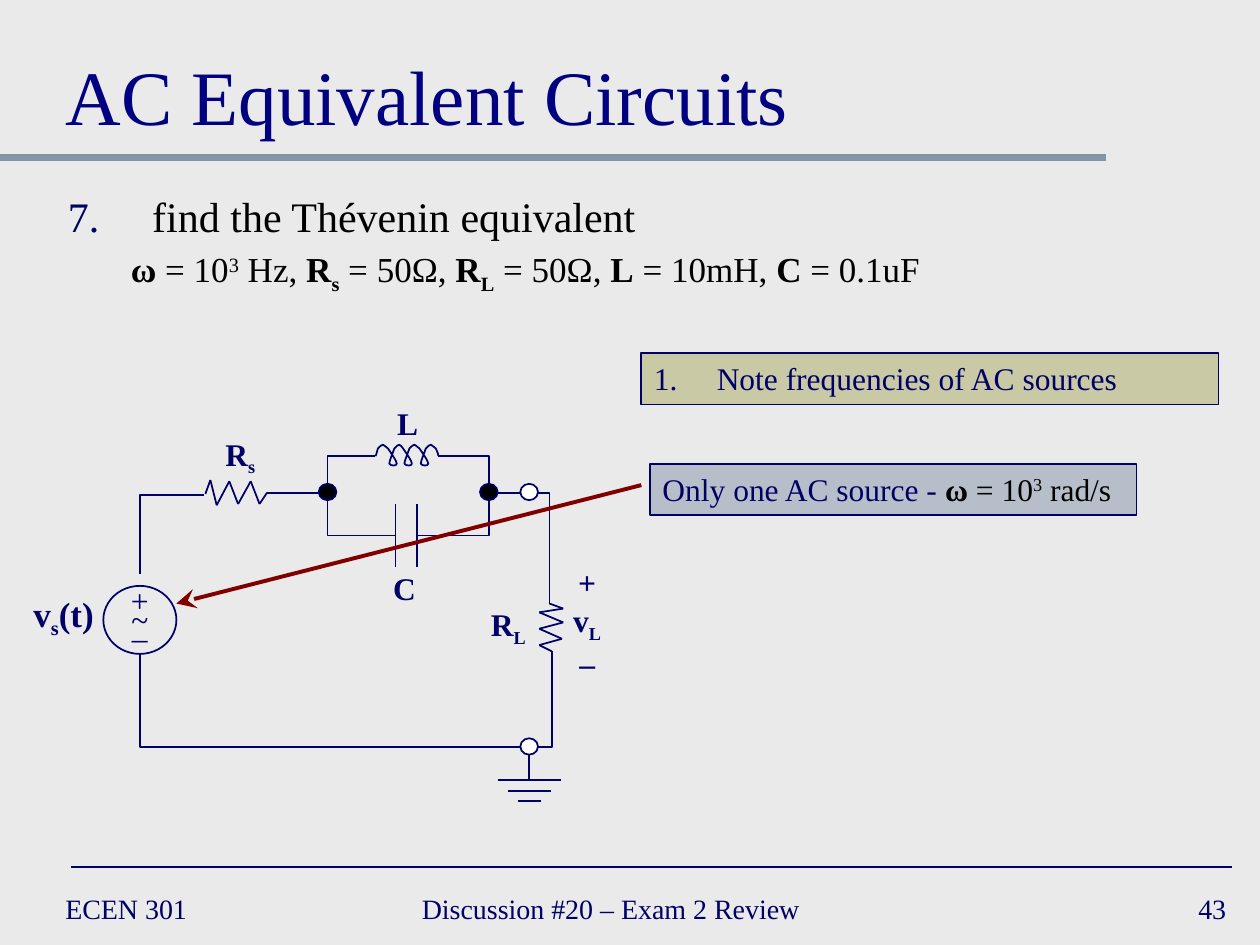
"""Build the slide on the Thévenin equivalent of an AC circuit."""
import itertools

import pptx
import pptx.dml.color
import pptx.enum.shapes
import pptx.enum.text
import pptx.oxml.ns
import pptx.util
from lxml import etree

FONT, NAVY, BLACK, WHITE = "Times New Roman", "000066", "000000", "FFFFFF"
STEEL, MAROON, KHAKI = "8495A9", "800000", "ACA964"
SHAPES = pptx.enum.shapes.MSO_SHAPE
ANCHORS = pptx.enum.text.MSO_ANCHOR
ALIGN = {name[0].lower(): getattr(pptx.enum.text.PP_ALIGN, name)
         for name in ("LEFT", "CENTER", "RIGHT")}

TITLE = "AC Equivalent Circuits"
TASK = [("find the Thévenin equivalent", "k")]
GIVENS = [("ω", "bk"), (" = 10", "k"), ("3", "k^"), (" Hz, ", "k"), ("R", "bk"), ("s", "bk_"),
          (" = 50Ω, ", "k"), ("R", "bk"), ("L", "bk_"), (" = 50Ω, ", "k"), ("L", "bk"),
          (" = 10mH, ", "k"), ("C ", "bk"), ("= 0.1uF", "k")]
STEP = [("Note frequencies of AC sources", "")]
ANSWER = [("Only one AC source - ", ""), ("ω", "bk"), (" = 10", "k"), ("3", "k^"),
          (" rad/s", "k")]
FOOTERS = [("ECEN 301", 0.42, 2.17, "l"),
           ("Discussion #20 – Exam 2 Review", 3.25, 3.83, "l"),
           ("43", 7.75, 2.08, "r")]
LABELS = [
    ((1.62, 3.4, 0.51, 0.4), 18, [[(" R", "b"), ("s", "b_")]]),
    ((0.16, 4.65, 0.69, 0.43), 20, [[("v", "b"), ("s", "b_"), ("(t)", "b")]]),
    ((0.94, 4.56, 0.34, 0.7), 18, [[("+", "")], [("–", "")]]),
    ((0.94, 4.71, 0.34, 0.4), 18, [[("~", "")]]),
    ((3.79, 4.75, 0.49, 0.4), 18, [[("R", "b"), ("L", "b_")]]),
    ((3.05, 3.16, 0.37, 0.4), 18, [[("L", "b")]]),
    ((3.02, 4.47, 0.38, 0.4), 18, [[("C", "b")]]),
    ((4.44, 4.42, 0.44, 1), 18, [[("+", "b")], [("v", "b"), ("L", "b_")], [("–", "b")]]),
]
SOURCE_RESISTOR = [(1.63, 3.92), (1.67, 3.81), (1.72, 4.01), (1.82, 3.82), (1.89, 4),
                   (1.99, 3.82), (2.06, 4), (2.12, 3.91), (2.53, 3.91)]
LOAD_RESISTOR = [(4.36, 4.79), (4.47, 4.83), (4.28, 4.86), (4.47, 4.94), (4.28, 4.99),
                 (4.46, 5.07), (4.28, 5.12), (4.38, 5.17)]
GROUND_BARS = [(6.19, 0.5), (6.28, 0.34), (6.36, 0.18)]
GROUND_X = 4.2
PLATES = [3.14, 3.31]
STRAIGHT_WIRES = [((GROUND_X, 6.18), (GROUND_X, 5.93)), ((3.95, 3.91), (4.13, 3.91))]
CORNER_WIRES = [((4.13, 5.93), (1.11, 5.19)), ((1.62, 3.93), (1.11, 4.56)),
                ((4.27, 3.91), (4.36, 4.79)), ((4.27, 5.93), (4.38, 5.17)),
                ((2.98, 3.62), (2.6, 3.84)), ((3.48, 3.62), (3.88, 3.84)),
                ((3.14, 4.25), (2.6, 3.97)), ((3.31, 4.25), (3.88, 3.97))]
NODES = [(2.53, 3.84, BLACK), (3.81, 3.84, BLACK), (4.13, 3.84, WHITE), (4.13, 5.86, WHITE)]
COIL_START, COIL_END = (3.48, 3.62), (2.98, 3.62)
COIL_CENTRES = [3.42, 3.29, 3.17, 3.04]
ARCH = [(0.02, 3.55), (0.01, 3.53), (0, 3.53), (-0.01, 3.53), (-0.02, 3.54), (-0.04, 3.56)]
LOOP = [(-0.05, 3.59), (-0.08, 3.66), (-0.08, 3.68), (-0.07, 3.7), (-0.02, 3.7),
        (-0.02, 3.68), (-0.02, 3.66), (-0.07, 3.59), (-0.09, 3.56)]


def inches(*values):
    return [pptx.util.Cm(2.54 * value) for value in values]


def colour(value):
    return pptx.dml.color.RGBColor.from_string(value)


def child(parent, tag, **attributes):
    return etree.SubElement(parent, pptx.oxml.ns.qn(tag), attributes)


def outline(shape, value=NAVY, width=1):
    shape.line.color.rgb = colour(value)
    shape.line.width = pptx.util.Pt(width)


def connect(slide, start, end, value=NAVY, width=1, corner=False):
    kinds = pptx.enum.shapes.MSO_CONNECTOR
    wire = slide.shapes.add_connector(kinds.ELBOW if corner else kinds.STRAIGHT,
                                      *inches(*start, *end))
    if corner:
        wire._element.spPr.find(pptx.oxml.ns.qn("a:prstGeom")).set("prst", "bentConnector2")
    outline(wire, value, width)
    child(wire._element.spPr, "a:effectLst")
    return wire


def number(paragraph, start, indent):
    properties = paragraph._p.get_or_add_pPr()
    margin = inches(indent)[0]
    properties.set("marL", str(margin))
    properties.set("indent", str(-margin))
    child(child(properties, "a:buClr"), "a:srgbClr", val=NAVY)
    child(properties, "a:buAutoNum", type="arabicPeriod", startAt=str(start))


def write(paragraph, runs, size, align="l"):
    paragraph.alignment = ALIGN[align]
    paragraph.font.size = pptx.util.Pt(size)
    paragraph.font.name = FONT
    for text, style in runs:
        run = paragraph.add_run()
        run.text = text
        run.font.bold = "b" in style
        run.font.color.rgb = colour(BLACK if "k" in style else NAVY)
        for mark, shift in (("_", "-25000"), ("^", "30000")):
            if mark in style:
                run._r.get_or_add_rPr().set("baseline", shift)


def text_box(slide, box, wrap=False, anchor=ANCHORS.TOP):
    frame = slide.shapes.add_textbox(*inches(*box)).text_frame
    frame.word_wrap = wrap
    frame.vertical_anchor = anchor
    return frame


def draw_shape(slide, kind, box, fill=None, alpha=None):
    shape = slide.shapes.add_shape(kind, *inches(*box))
    shape.shadow.inherit = False
    shape.text_frame.vertical_anchor = ANCHORS.TOP
    outline(shape)
    if fill is None:
        shape.fill.background()
    else:
        shape.fill.solid()
        shape.fill.fore_color.rgb = colour(fill)
    if alpha:
        child(shape._element.spPr.find(".//" + pptx.oxml.ns.qn("a:srgbClr")), "a:alpha",
              val=str(alpha * 1000))
    return shape


def draw_coil(slide):
    controls = [(3.48, 3.61), (3.47, 3.58), (3.46, 3.56)]
    for centre in COIL_CENTRES:
        turn = ARCH if centre == COIL_CENTRES[-1] else ARCH + LOOP
        controls += [(centre + x, y) for x, y in turn]
    controls += [(2.99, 3.58), (2.99, 3.61), COIL_END]
    builder = slide.shapes.build_freeform(*inches(*COIL_START))
    builder.add_line_segments([inches(*point) for point in controls], close=False)
    coil = builder.convert_to_shape()
    coil.shadow.inherit = False
    coil.fill.background()
    outline(coil)
    outline_path = coil._element.spPr.find(".//" + pptx.oxml.ns.qn("a:path"))
    sides = outline_path.findall(pptx.oxml.ns.qn("a:lnTo"))
    for first in range(0, len(sides), 3):
        curve = child(outline_path, "a:cubicBezTo")
        for side in sides[first:first + 3]:
            curve.append(side[0])
            outline_path.remove(side)


def draw_circuit(slide):
    for start, end in CORNER_WIRES:
        connect(slide, start, end, corner=True)
    segments = STRAIGHT_WIRES + [pair for zigzag in (SOURCE_RESISTOR, LOAD_RESISTOR)
                                 for pair in itertools.pairwise(zigzag)]
    segments += [((GROUND_X - w / 2, y), (GROUND_X + w / 2, y)) for y, w in GROUND_BARS]
    segments += [((x, 4), (x, 4.5)) for x in PLATES]
    for start, end in segments:
        connect(slide, start, end)
    draw_coil(slide)
    for left, top, fill in NODES:
        draw_shape(slide, SHAPES.OVAL, (left, top, 0.14, 0.13), fill)
    draw_shape(slide, SHAPES.OVAL, (0.82, 4.65, 0.58, 0.54))
    for box, size, lines in LABELS:
        frame = text_box(slide, box)
        for index, runs in enumerate(lines):
            paragraph = frame.add_paragraph() if index else frame.paragraphs[0]
            write(paragraph, runs, size, "c")


def main():
    deck = pptx.Presentation()
    deck.slide_width, deck.slide_height = inches(10, 7.5)
    slide = deck.slides.add_slide(deck.slide_layouts[5])
    slide.background.fill.solid()
    slide.background.fill.fore_color.rgb = colour("EAEAEA")
    connect(slide, (0, 1.25), (8.78, 1.25), STEEL, 4)
    connect(slide, (0.56, 6.88), (9.78, 6.88))
    for text, left, width, align in FOOTERS:
        frame = text_box(slide, (left, 7, width, 0.42), True, ANCHORS.MIDDLE)
        write(frame.paragraphs[0], [(text, "")], 16, align)

    title = slide.shapes.title
    title.left, title.top, title.width, title.height = inches(0.42, 0.17, 9.17, 1)
    title.text_frame.vertical_anchor = ANCHORS.BOTTOM
    title.text_frame.auto_size = pptx.enum.text.MSO_AUTO_SIZE.NONE
    write(title.text_frame.paragraphs[0], [(TITLE, "")], 44)
    title.text_frame.paragraphs[0].runs[0].font.color.rgb = colour("000080")

    problem = text_box(slide, (0.44, 1.46, 9.14, 1.12), True)
    number(problem.paragraphs[0], 7, 0.67)
    write(problem.paragraphs[0], TASK, 24)
    givens = problem.add_paragraph()
    givens._p.get_or_add_pPr().set("marL", str(inches(0.5)[0]))
    givens.space_before = pptx.util.Pt(4)
    write(givens, GIVENS, 20)

    draw_circuit(slide)
    step = draw_shape(slide, SHAPES.RECTANGLE, (5.09, 2.8, 4.58, 0.41), KHAKI, 50)
    number(step.text_frame.paragraphs[0], 1, 0.5)
    write(step.text_frame.paragraphs[0], STEP, 18)
    arrow = connect(slide, (5.09, 3.85), (1.4, 4.79), MAROON, 2.25)
    child(arrow.line._get_or_add_ln(), "a:tailEnd", type="stealth", w="lg", len="lg")
    answer = draw_shape(slide, SHAPES.RECTANGLE, (5.16, 3.68, 3.86, 0.41), STEEL, 50)
    answer.text_frame.word_wrap = False
    write(answer.text_frame.paragraphs[0], ANSWER, 18)
    deck.save("out.pptx")


if __name__ == "__main__":
    main()
